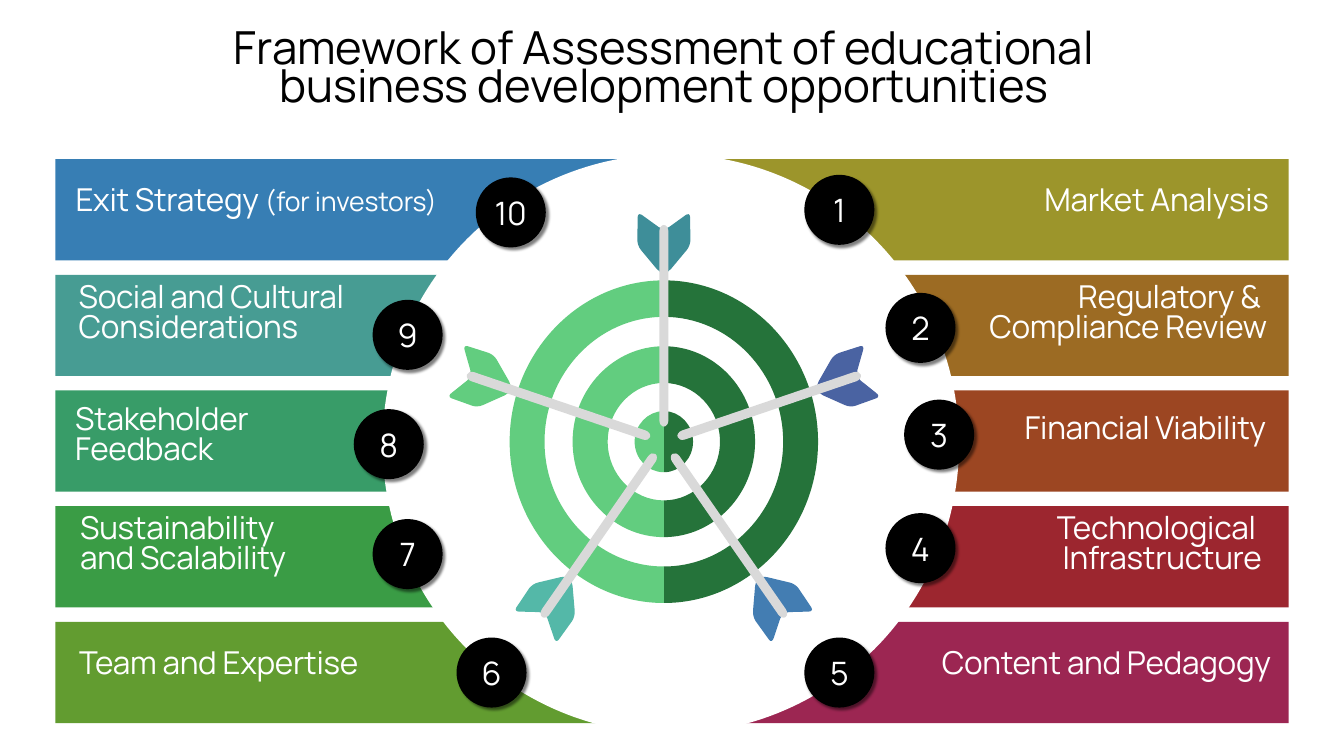
import math
from dataclasses import dataclass

import lxml.etree
import pptx
import pptx.dml.color
import pptx.enum.shapes
import pptx.enum.text
import pptx.oxml.ns
import pptx.util

Cm = pptx.util.Cm
Pt = pptx.util.Pt
SHAPES = pptx.enum.shapes.MSO_SHAPE
ALIGN = pptx.enum.text.PP_ALIGN
ANCHOR = pptx.enum.text.MSO_ANCHOR
qn = pptx.oxml.ns.qn

FONT = "Manrope"
BAR_TOP, BAR_PITCH, BAR_HEIGHT = 8.02, 5.83, 5.1
BADGE_SIZE = 3.53
LINE_HEIGHTS = {1: 2.49, 2: 4.45}

# Target geometry: radii are vertical, the horizontal ones are squeezed
CENTER_X, CENTER_Y, SQUEEZE = 33.46, 22.26, 0.956
RINGS = [(8.13, 6.29), (4.81, 2.96), (1.54, 0)]
WHITE_RADIUS = 7.11
LIGHT_GREEN, DARK_GREEN = "62CD7F", "25733A"

# Outlines hold (sideways, distance from center); steps are C curve or L line
ARROW_COLORS = ["3E8E99", "4A63A2", "437DB2", "54B8A8", "62CD7F"]
SHAFT_NEAR, SHAFT_FAR, SHAFT_HALF_WIDTH, SHAFT_CAP = 1.09, 10.59, 0.24, 0.33
FEATHER = [(0, 8.48), (0.1, 8.48), (0.27, 8.59), (0.38, 8.71), (1.2, 9.65),
           (1.32, 9.78), (1.4, 10.01), (1.4, 10.16), (1.38, 11.33), (1.38, 11.48),
           (1.25, 11.51), (1.12, 11.4), (0.28, 10.82), (0.13, 10.72)]
FEATHER_STEPS = "CLCLCLCLCLCLC"
BAND_STEPS = "CCLCC"


@dataclass
class Criterion:
    number: int
    lines: list[str]
    row: int
    color: str
    label: tuple[float, float, float]  # left, top, width
    badge: tuple[float, float]  # left, top
    line_count: int = 1
    remark: str = ""

    @property
    def on_right(self) -> bool:
        return self.number <= 5


CRITERIA = [
    Criterion(1, ["Market Analysis"], 0, "9C952B", (50.6, 9.32, 13.49), (40.54, 8.81)),
    Criterion(2, ["Regulatory & ", "Compliance Review"], 1, "9C6B23",
              (44.42, 14.18, 19.56), (44.63, 14.76), 2),
    Criterion(3, ["Financial Viability"], 2, "9C4622", (46.94, 20.82, 16.99), (45.57, 20.14)),
    Criterion(4, ["Technological ", "Infrastructure"], 3, "9C262F",
              (41.76, 25.83, 21.97), (44.63, 25.86), 2),
    Criterion(5, ["Content and Pedagogy"], 4, "9C2652", (42.47, 32.64, 21.72), (40.54, 32.13)),
    Criterion(6, ["Team and Expertise"], 4, "629C30", (3.86, 32.64, 18.54), (23.01, 32.13)),
    Criterion(7, ["Sustainability", "and Scalability"], 3, "3A9C45",
              (3.91, 25.83, 16.26), (18.78, 26.16), 2),
    Criterion(8, ["Stakeholder Feedback"], 2, "389C68", (3.66, 20.35, 15.21), (17.83, 20.62), 2),
    Criterion(9, ["Social and Cultural Considerations"], 1, "479C93",
              (3.84, 14.18, 17.53), (18.78, 15.11), 2),
    Criterion(10, ["Exit Strategy "], 0, "377EB4", (3.68, 9.32, 21.72), (23.98, 8.94),
              remark="(for investors)"),
]


def rgb(color: str):
    return pptx.dml.color.RGBColor.from_string(color)


def paint(shape, color: str) -> None:
    shape.shadow.inherit = False
    shape.fill.solid()
    shape.fill.fore_color.rgb = rgb(color)
    shape.line.fill.background()


def add_filled(slide, kind, box: tuple, color: str):
    shape = slide.shapes.add_shape(kind, *(Cm(length) for length in box))
    paint(shape, color)
    return shape


def set_margins(frame, margin: float) -> None:
    frame.margin_left = frame.margin_right = Cm(margin)
    frame.margin_top = frame.margin_bottom = Cm(margin)


def style_paragraph(paragraph, size: float, color: str, alignment, spacing: float = 1.0) -> None:
    paragraph.alignment = alignment
    paragraph.line_spacing = spacing
    paragraph.font.name = FONT
    paragraph.font.size = Pt(size)
    paragraph.font.color.rgb = rgb(color)


def add_title(slide) -> None:
    title = slide.shapes.title
    title.left, title.top, title.width, title.height = Cm(1.98), Cm(0.64), Cm(63), Cm(5.97)
    frame = title.text_frame
    frame.text = "Framework of Assessment of educational\nbusiness development opportunities"
    frame.auto_size = pptx.enum.text.MSO_AUTO_SIZE.NONE
    frame.vertical_anchor = ANCHOR.MIDDLE
    set_margins(frame, 0.13)
    for paragraph in frame.paragraphs:
        style_paragraph(paragraph, 65, "000000", ALIGN.CENTER, 0.7)


def add_bar(slide, item: Criterion) -> None:
    left, width = (34, 30.95) if item.on_right else (2.79, 31.21)
    top = BAR_TOP + item.row * BAR_PITCH
    add_filled(slide, SHAPES.RECTANGLE, (left, top, width, BAR_HEIGHT), item.color)


def add_label(slide, item: Criterion) -> None:
    box = (*item.label, LINE_HEIGHTS[item.line_count])
    frame = slide.shapes.add_textbox(*(Cm(length) for length in box)).text_frame
    frame.word_wrap = True
    set_margins(frame, 0.13)
    frame.text = "\n".join(item.lines)
    for paragraph in frame.paragraphs:
        alignment = ALIGN.RIGHT if item.on_right else ALIGN.LEFT
        style_paragraph(paragraph, 45, "FFFFFF", alignment, 0.8)
        for run in paragraph.runs:
            run._r.get_or_add_rPr().set("spc", "-40")
    if item.remark:
        run = frame.paragraphs[0].add_run()
        run.text = item.remark
        run.font.size = Pt(38)
        run._r.get_or_add_rPr().set("spc", "-30")


def add_badge(slide, item: Criterion) -> None:
    shape = add_filled(slide, SHAPES.OVAL, (*item.badge, BADGE_SIZE, BADGE_SIZE), "000000")
    # Soft shadow to the lower right
    effects = shape._element.spPr.find(qn("a:effectLst"))
    shadow = lxml.etree.SubElement(effects, qn("a:outerShdw"), blurRad=str(Pt(4)),
                                   dist=str(Pt(5)), dir="2700000", algn="tl", rotWithShape="0")
    tint = lxml.etree.SubElement(shadow, qn("a:srgbClr"), val="000000")
    lxml.etree.SubElement(tint, qn("a:alpha"), val="50000")
    frame = shape.text_frame
    frame.word_wrap = False
    frame.vertical_anchor = ANCHOR.MIDDLE
    set_margins(frame, 0.15)
    frame.text = str(item.number)
    style_paragraph(frame.paragraphs[0], 46, "FFFFFF", ALIGN.CENTER)


def target_point(sideways: float, radius: float, angle: float) -> tuple[int, int]:
    """Point at a clockwise angle from the top, shifted sideways."""
    across = radius * math.sin(angle) + sideways * math.cos(angle)
    up = radius * math.cos(angle) - sideways * math.sin(angle)
    return Cm(CENTER_X + SQUEEZE * across), Cm(CENTER_Y - up)


def half_arc(width: float, height: float, base: float = 0) -> list:
    """Two quarter curves from -width to width, bulging by height."""
    bend = 0.55
    left = [(-width, base), (-width, base + bend * height), (-bend * width, base + height)]
    right = [(-sideways, radius) for sideways, radius in reversed(left)]
    return left + [(0, base + height)] + right


def add_outline(slide, contours: list, angle: float, color: str) -> None:
    """Draw contours given as (points, steps), turned by the angle."""
    builder = None
    for points, _ in contours:
        start, *others = [target_point(*point, angle) for point in points]
        if builder is None:
            builder = slide.shapes.build_freeform(*start)
        else:
            builder.move_to(*start)
        builder.add_line_segments(others, close=True)
    shape = builder.convert_to_shape()
    paint(shape, color)
    # Join three line segments into one curve for each C step
    segments = iter(shape._element.findall(".//" + qn("a:lnTo")))
    for step in "".join(steps for _, steps in contours):
        segment = next(segments)
        if step == "C":
            segment.tag = qn("a:cubicBezTo")
            for _ in range(2):
                extra = next(segments)
                segment.append(extra[0])
                extra.getparent().remove(extra)


def add_target_half(slide, side: int, color: str) -> None:
    contours = []
    for outer, inner in RINGS:
        if inner:
            contours.append((half_arc(outer, outer) + half_arc(inner, inner)[::-1], BAND_STEPS))
        else:
            contours.append((half_arc(outer, outer), "CC"))
    add_outline(slide, contours, side * math.pi / 2, color)


def add_arrow(slide, angle: float, color: str) -> None:
    mirrored = [(-sideways, radius) for sideways, radius in reversed(FEATHER)]
    add_outline(slide, [(FEATHER + mirrored, FEATHER_STEPS)], angle, color)
    shaft = (half_arc(SHAFT_HALF_WIDTH, SHAFT_CAP, SHAFT_FAR)
             + half_arc(SHAFT_HALF_WIDTH, -SHAFT_CAP, SHAFT_NEAR)[::-1])
    add_outline(slide, [(shaft, BAND_STEPS)], angle, "D9D9D9")


def main() -> None:
    presentation = pptx.Presentation()
    presentation.slide_width, presentation.slide_height = Cm(67.74), Cm(38.1)
    slide = presentation.slides.add_slide(presentation.slide_layouts[5])
    add_title(slide)

    # Coloured bars with a round clearing in the middle
    for item in CRITERIA:
        add_bar(slide, item)
    add_filled(slide, SHAPES.OVAL, (19.28, 7.77, 29.06, 29.21), "FFFFFF")
    for item in CRITERIA:
        add_label(slide, item)

    # Target and its five arrows
    half_width = WHITE_RADIUS * SQUEEZE
    add_filled(slide, SHAPES.OVAL, (CENTER_X - half_width, CENTER_Y - WHITE_RADIUS,
                                    2 * half_width, 2 * WHITE_RADIUS), "FFFFFF")
    add_target_half(slide, 1, DARK_GREEN)
    add_target_half(slide, -1, LIGHT_GREEN)
    for index, color in enumerate(ARROW_COLORS):
        add_arrow(slide, index * math.tau / len(ARROW_COLORS), color)

    # Numbers
    for item in CRITERIA:
        add_badge(slide, item)
    presentation.save("out.pptx")


if __name__ == "__main__":
    main()
